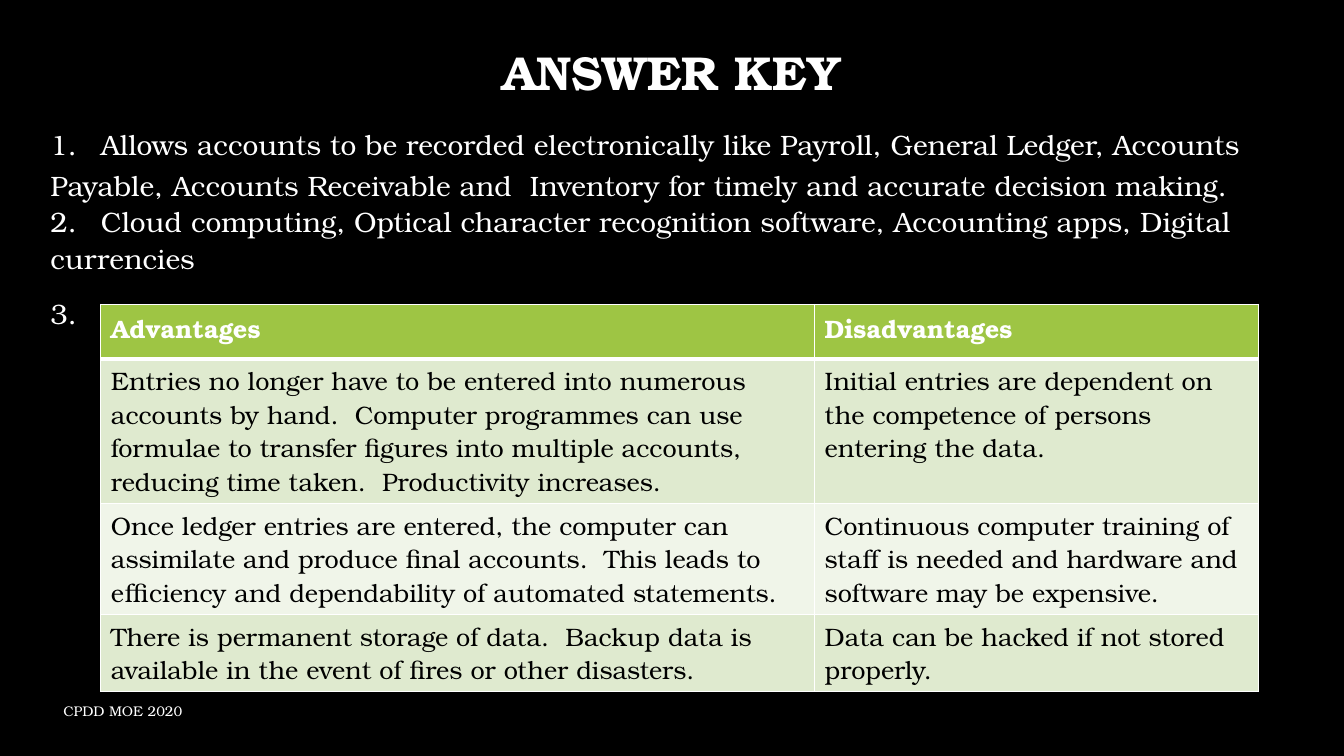
from dataclasses import dataclass

from lxml import etree
from pptx import Presentation
from pptx.dml.color import RGBColor
from pptx.enum.text import MSO_ANCHOR, MSO_AUTO_SIZE, PP_ALIGN
from pptx.oxml.ns import qn
from pptx.util import Inches, Pt

MIDDLE, TOP = MSO_ANCHOR.MIDDLE, MSO_ANCHOR.TOP
LEFT, CENTER = PP_ALIGN.LEFT, PP_ALIGN.CENTER
NO_FIT = MSO_AUTO_SIZE.NONE


@dataclass(frozen=True)
class Theme:
    font: str = "TeX Gyre Bonum"
    background: str = "000000"
    light: str = "FFFFFF"
    dark: str = "000000"
    header: str = "9EC544"
    bands: tuple[str, str] = ("DFEACF", "F0F5E9")
    title_size: float = 34
    body_size: float = 20
    table_size: float = 18
    footer_size: float = 10
    border: float = 1
    header_border: float = 3


@dataclass(frozen=True)
class Area:
    left: float
    top: float
    width: float
    height: float


@dataclass(frozen=True)
class Answer:
    text: str
    line_spacing: float
    space_before: float


@dataclass(frozen=True)
class Row:
    height: float
    advantage: str
    disadvantage: str


THEME = Theme()
TITLE_AREA = Area(1, 0.23, 11.32, 1.03)
BODY_AREA = Area(0.4, 1.15, 12.57, 5.18)
FOOTER_AREA = Area(0.53, 6.85, 7.3, 0.4)
TABLE_AREA = Area(1, 3.02, 11.48, 3.58)
COLUMN_WIDTHS = (7.08, 4.4)
NUMBER_TAB = 0.5

ANSWERS = (
    Answer(
        "1.\tAllows accounts to be recorded electronically like Payroll, General Ledger, Accounts "
        "\tPayable, Accounts Receivable and  Inventory for timely and accurate decision making.",
        1.2, 10,
    ),
    Answer(
        "2. \tCloud computing, Optical character recognition software, Accounting apps, Digital "
        "\tcurrencies",
        1.1, 0,
    ),
    Answer("3.", 1.2, 10),
)

ROWS = (
    Row(0.54, "Advantages", "Disadvantages"),
    Row(
        1.16,
        "Entries no longer have to be entered into numerous accounts by hand.  Computer programmes "
        "can use formulae to transfer figures into multiple accounts, reducing time taken.  "
        "Productivity increases.",
        "Initial entries are dependent on the competence of persons entering the data.",
    ),
    Row(
        1.04,
        "Once ledger entries are entered, the computer can assimilate and produce final accounts.  "
        "This leads to efficiency and dependability of automated statements.",
        "Continuous computer training of staff is needed and hardware and software may be expensive.",
    ),
    Row(
        0.56,
        "There is permanent storage of data.  Backup data is available in the event of fires or "
        "other disasters.",
        "Data can be hacked if not stored properly.",
    ),
)


def inches(area: Area) -> tuple:
    return tuple(Inches(n) for n in (area.left, area.top, area.width, area.height))


def place(shape, area: Area, anchor) -> None:
    shape.left, shape.top, shape.width, shape.height = inches(area)
    frame = shape.text_frame
    frame.word_wrap = True
    frame.auto_size = NO_FIT
    frame.vertical_anchor = anchor


def format_runs(para, size: float, color: str, bold: bool = False) -> None:
    for span in para.runs:
        span.font.name = THEME.font
        span.font.size = Pt(size)
        span.font.bold = bold
        span.font.color.rgb = RGBColor.from_string(color)


def draw_title(page) -> None:
    title = page.shapes.title
    place(title, TITLE_AREA, MIDDLE)
    title.text_frame.text = "ANSWER KEY"
    para = title.text_frame.paragraphs[0]
    para.alignment = CENTER
    para.line_spacing = 0.9
    format_runs(para, THEME.title_size, THEME.light, bold=True)


def draw_answers(page) -> None:
    body = page.placeholders[1]
    place(body, BODY_AREA, TOP)
    body.text_frame.text = "\n".join(answer.text for answer in ANSWERS)
    for para, answer in zip(body.text_frame.paragraphs, ANSWERS):
        para.alignment = LEFT
        para.line_spacing = answer.line_spacing
        para.space_before = Pt(answer.space_before)
        format_runs(para, THEME.body_size, THEME.light)
        properties = para._p.get_or_add_pPr()
        properties.set("marL", "0")
        properties.set("indent", "0")
        etree.SubElement(properties, qn("a:buNone"))
        tabs = etree.SubElement(properties, qn("a:tabLst"))
        etree.SubElement(tabs, qn("a:tab"), pos=str(Inches(NUMBER_TAB)), algn="l")


def draw_footer(page) -> None:
    box = page.shapes.add_textbox(*inches(FOOTER_AREA))
    place(box, FOOTER_AREA, MIDDLE)
    box.text_frame.text = "CPDD MOE 2020"
    format_runs(box.text_frame.paragraphs[0], THEME.footer_size, THEME.light)


def set_borders(cell, top: float, bottom: float) -> None:
    widths = {"lnL": THEME.border, "lnR": THEME.border, "lnT": top, "lnB": bottom}
    properties = cell._tc.get_or_add_tcPr()
    for position, (side, width) in enumerate(widths.items()):
        line = etree.Element(qn(f"a:{side}"), w=str(Pt(width)))
        fill = etree.SubElement(line, qn("a:solidFill"))
        etree.SubElement(fill, qn("a:srgbClr"), val=THEME.light)
        properties.insert(position, line)


def draw_table(page) -> None:
    frame = page.shapes.add_table(len(ROWS), len(COLUMN_WIDTHS), *inches(TABLE_AREA))
    table = frame.table
    table.horz_banding = False
    for column, width in zip(table.columns, COLUMN_WIDTHS):
        column.width = Inches(width)
    for index, row in enumerate(ROWS):
        table.rows[index].height = Inches(row.height)
        is_header = index == 0
        fill = THEME.header if is_header else THEME.bands[(index - 1) % 2]
        color = THEME.light if is_header else THEME.dark
        top = THEME.header_border if index == 1 else THEME.border
        bottom = THEME.header_border if is_header else THEME.border
        for cell, text in zip(table.rows[index].cells, (row.advantage, row.disadvantage)):
            cell.text_frame.text = text
            format_runs(cell.text_frame.paragraphs[0], THEME.table_size, color, bold=is_header)
            cell.fill.solid()
            cell.fill.fore_color.rgb = RGBColor.from_string(fill)
            set_borders(cell, top, bottom)


def main() -> None:
    deck = Presentation()
    deck.slide_width, deck.slide_height = Inches(13.33), Inches(7.5)
    page = deck.slides.add_slide(deck.slide_layouts[1])
    page.background.fill.solid()
    page.background.fill.fore_color.rgb = RGBColor.from_string(THEME.background)
    draw_title(page)
    draw_answers(page)
    draw_footer(page)
    draw_table(page)
    deck.save("out.pptx")


if __name__ == "__main__":
    main()
